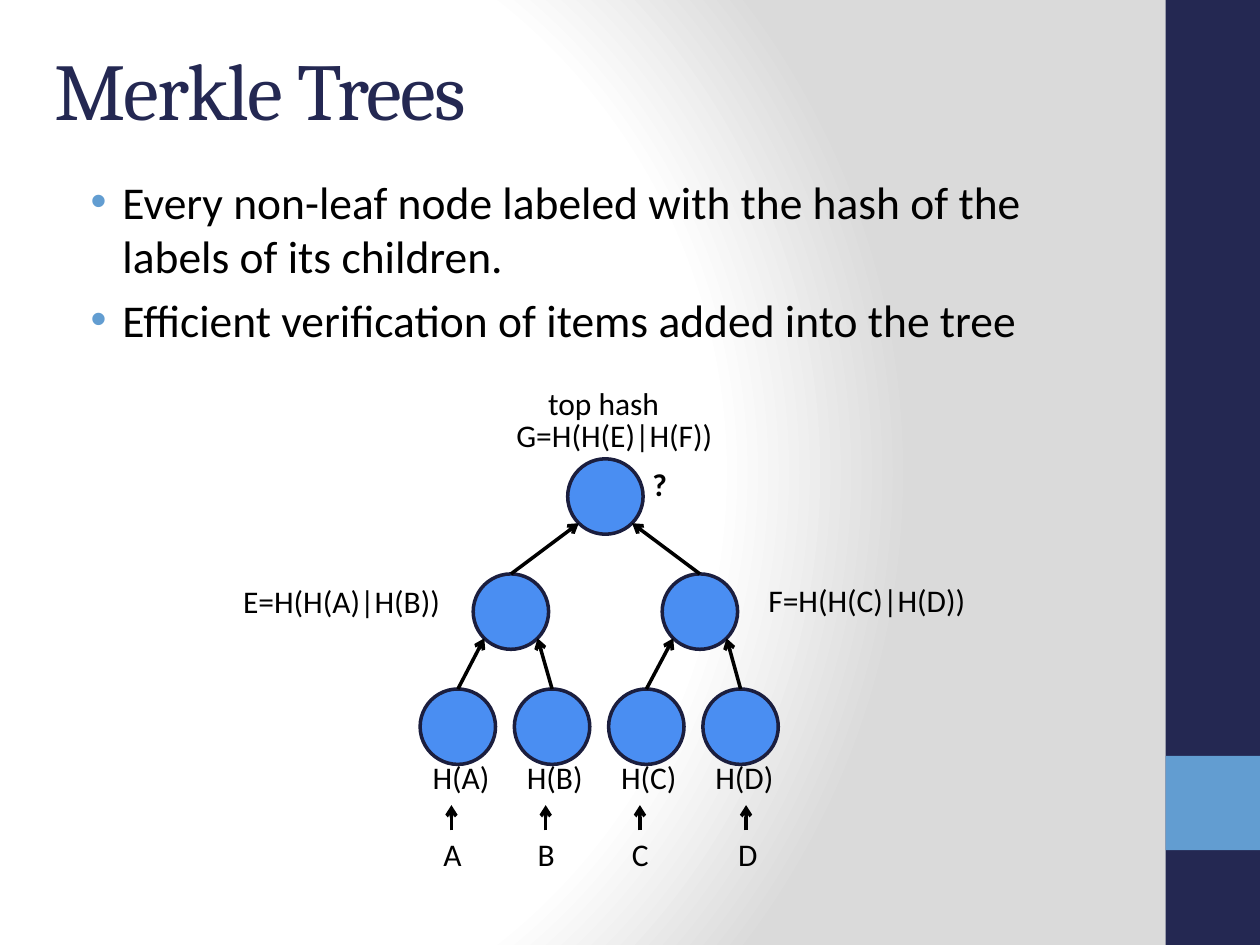
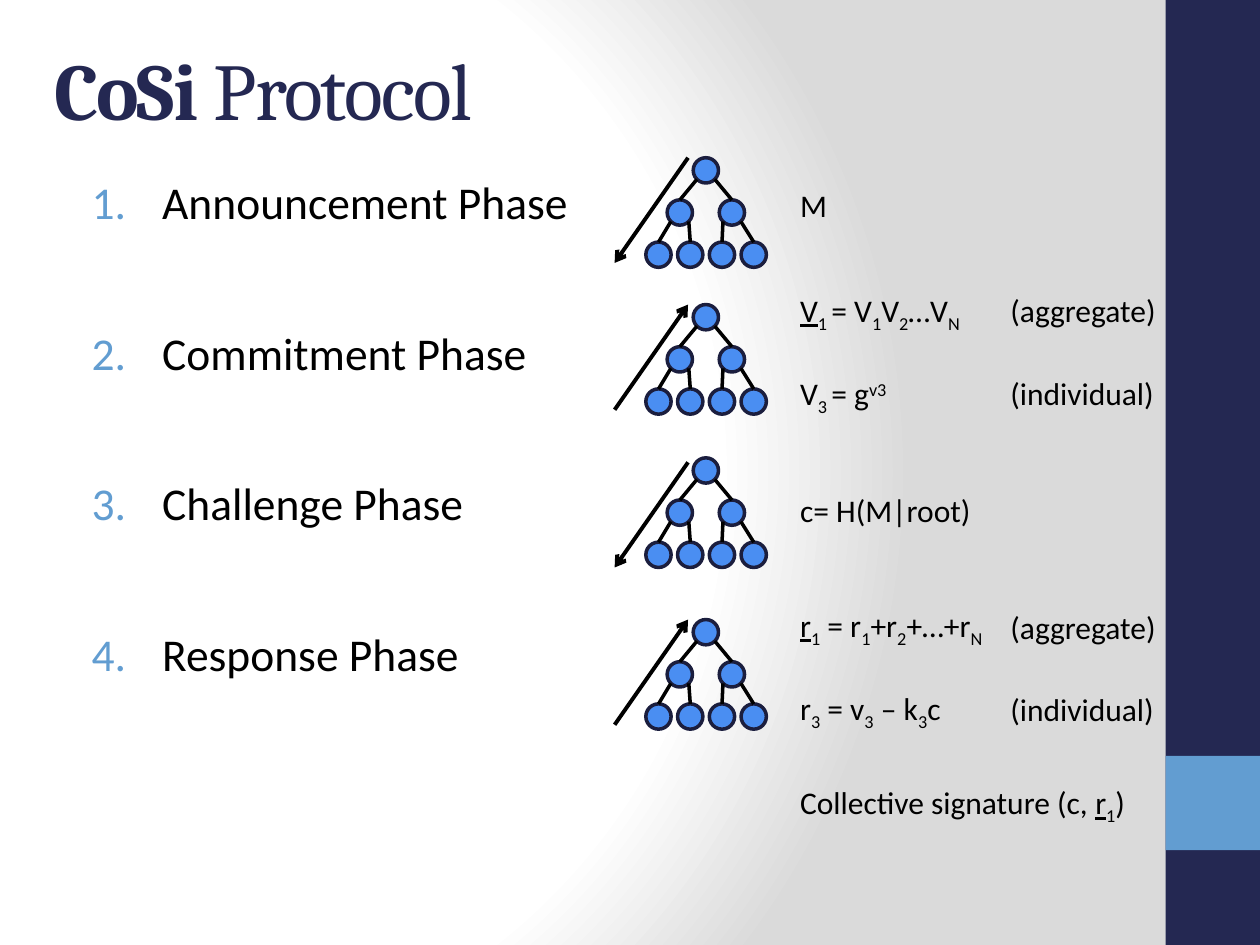
from collections import namedtuple
from math import sqrt

from lxml.etree import SubElement
from pptx import Presentation
from pptx.dml.color import RGBColor
from pptx.enum.shapes import MSO_CONNECTOR as Link, MSO_SHAPE as Shape
from pptx.enum.text import MSO_ANCHOR as Anchor
from pptx.oxml import parse_xml
from pptx.oxml.ns import nsdecls, qn
from pptx.util import Cm, Pt

COLORS = {
    "navy": "242852",
    "sky": "629DD1",
    "node": "4A8EF2",
    "rim": "1B1E3E",
    "ink": "000000",
    "white": "FFFFFF",
    "grey": "DADADA",
}
STYLES = {
    "plain": {},
    "bold": {"b": "1"},
    "under": {"u": "sng"},
    "sub": {"baseline": "-25000"},
    "sup": {"baseline": "30000"},
    "title": {"spc": "-100"},
    "bold title": {"spc": "-100", "b": "1"},
}
BACKGROUND = f"""<p:bg {nsdecls("p", "a")}><p:bgPr><a:gradFill rotWithShape="1"><a:gsLst>
<a:gs pos="0"><a:srgbClr val="{COLORS['white']}"/></a:gs>
<a:gs pos="75000"><a:srgbClr val="{COLORS['white']}"/></a:gs>
<a:gs pos="100000"><a:srgbClr val="{COLORS['grey']}"/></a:gs></a:gsLst>
<a:path path="circle"><a:fillToRect l="20000" t="50000" r="100000" b="50000"/></a:path>
</a:gradFill><a:effectLst/></p:bgPr></p:bg>"""

WIDTH, HEIGHT = 25.4, 19.05
BAND = 1.9

# All lengths in cm: node diameter, gap between levels and leaves, left offsets of the inner nodes
TreeSize = namedtuple("TreeSize", "node level leaf inner")
LARGE_TREE = TreeSize(1.52, 2.32, 1.9, (1.07, 4.88))
SMALL_TREE = TreeSize(0.51, 0.85, 0.64, (0.43, 1.48))


def rgb(name):
    return RGBColor.from_string(COLORS[name])


class Slides:
    def __init__(self):
        self.deck = Presentation()
        self.deck.slide_width, self.deck.slide_height = Cm(WIDTH), Cm(HEIGHT)
        self.page = None

    def new_page(self, *title):
        self.page = self.deck.slides.add_slide(self.deck.slide_layouts[6])
        self.page.element.cSld.insert(0, parse_xml(BACKGROUND))
        self.shape(Shape.RECTANGLE, WIDTH - BAND, 0, BAND, HEIGHT, "navy")
        self.shape(Shape.RECTANGLE, WIDTH - BAND, 15.24, BAND, BAND, "sky")
        frame = self.text_box(0.84, 0.2, 22.28, 3.18)
        frame.vertical_anchor = Anchor.MIDDLE
        self.add_spans(frame.paragraphs[0], title, 46, "Cambria", "navy")

    def shape(self, kind, left, top, width, height, fill, rim=None):
        shape = self.page.shapes.add_shape(kind, Cm(left), Cm(top), Cm(width), Cm(height))
        shape.shadow.inherit = False
        shape.fill.solid()
        shape.fill.fore_color.rgb = rgb(fill)
        if rim:
            shape.line.color.rgb = rgb(rim)
            shape.line.width = Pt(2)
        else:
            shape.line.fill.background()

    def text_box(self, left, top, width, height):
        box = self.page.shapes.add_textbox(Cm(left), Cm(top), Cm(width), Cm(height))
        box.text_frame.word_wrap = True
        return box.text_frame

    def add_spans(self, para, spans, size, font="Calibri", color="ink"):
        """Fill a paragraph with spans, each a string or a (text, style) pair."""
        for item in spans:
            text, style = (item, "plain") if isinstance(item, str) else item
            span = para.add_run()
            span.text = text
            span.font.size, span.font.name = Pt(size), font
            span.font.color.rgb = rgb(color)
            for key, value in STYLES[style].items():
                span.font._element.set(key, value)

    def label(self, left, top, width, *spans):
        frame = self.text_box(left, top, width, 1.02)
        self.add_spans(frame.paragraphs[0], spans, 18)

    def bullets(self, box, items, margin, hang, gap, numbered=False):
        frame = self.text_box(*box)
        for index, item in enumerate(items):
            para = frame.add_paragraph() if index else frame.paragraphs[0]
            props = para._p.get_or_add_pPr()
            props.set("marL", str(Cm(margin)))
            props.set("indent", str(-Cm(hang)))
            if index:
                para.space_before = Pt(gap)
            color = SubElement(props, qn("a:buClr"))
            SubElement(color, qn("a:srgbClr"), val=COLORS["sky"])
            if numbered:
                SubElement(props, qn("a:buAutoNum"), type="arabicPeriod")
            else:
                SubElement(props, qn("a:buFont"), typeface="Arial")
                SubElement(props, qn("a:buChar"), char="•")
            self.add_spans(para, [item], 26)

    def line(self, start, end, arrow=True, width=2):
        link = self.page.shapes.add_connector(
            Link.STRAIGHT, *(Cm(value) for value in (*start, *end)))
        link.line.color.rgb = rgb("ink")
        link.line.width = Pt(width)
        props = link.element.spPr
        if arrow:
            SubElement(props.find(qn("a:ln")), qn("a:tailEnd"), type="arrow")
        SubElement(props, qn("a:effectLst"))

    def tree(self, left, top, size, arrows):
        """Draw a three-level binary tree whose edges run from child to parent."""
        levels = [
            [sum(size.inner) / 2],
            list(size.inner),
            [size.leaf * index for index in range(4)],
        ]
        radius = size.node / 2
        reach = radius / sqrt(2)
        for depth, offsets in enumerate(levels):
            y = top + depth * size.level
            for index, offset in enumerate(offsets):
                x = left + offset
                self.shape(Shape.OVAL, x, y, size.node, size.node, "node", "rim")
                if depth:
                    parent = left + levels[depth - 1][index // 2] + radius
                    side = reach if index % 2 else -reach
                    self.line((x + radius, y),
                              (parent + side, y - size.level + radius + reach), arrows)


def merkle_trees(slides):
    slides.new_page(("Merkle Trees", "title"))
    slides.bullets((1.27, 3.38, 21.16, 3.81), [
        "Every non-leaf node labeled with the hash of the labels of its children.",
        "Efficient verification of items added into the tree",
    ], margin=0.95, hang=0.64, gap=5)

    left = 8.47
    slides.tree(left, 9.25, LARGE_TREE, arrows=True)
    for index, (letter, x) in enumerate(zip("ABCD", (9.1, 11, 12.9, 15.04))):
        slides.label(left + index * LARGE_TREE.leaf, 15.16, 1.75, f"H({letter})")
        slides.line((x, 16.74), (x, 16.23))
        slides.label(x - 0.41, 16.7, 0.9, letter)

    slides.label(4.65, 11.61, 5.08, "E=H(H(A)|H(B))")
    slides.label(15.24, 11.58, 6.15, "F=H(H(C)|H(D))")
    slides.label(10.8, 7.62, 2.8, "top hash")
    slides.label(10.16, 8.26, 6.15, "G=H(H(E)|H(F))")
    slides.label(12.9, 9.25, 0.85, ("?", "bold"))


def cosi_protocol(slides):
    slides.new_page(("CoSi", "bold title"), (" Protocol", "title"))
    slides.bullets((1.27, 3.38, 12.07, 14.6), [
        "Announcement Phase", "Commitment Phase", "Challenge Phase", "Response Phase",
    ], margin=1.75, hang=1.42, gap=55, numbered=True)

    phases = [(3.18, 3.18, True), (6.14, 6.14, False),
              (9.23, 9.32, True), (12.49, 12.49, False)]
    for tree_top, arrow_top, downward in phases:
        slides.tree(13.02, tree_top, SMALL_TREE, arrows=False)
        upper, lower = (13.87, arrow_top), (12.39, arrow_top + 2.12)
        start, end = (upper, lower) if downward else (lower, upper)
        slides.line(start, end, width=2.25)

    formulas = [
        (3.63, 1.2, ["M"]),
        (5.74, 4.1, [("V", "under"), ("1 ", "sub"), "= V", ("1", "sub"), "V", ("2", "sub"),
                     "…V", ("N", "sub")]),
        (7.42, 2.6, ["V", ("3 ", "sub"), "= g", ("v3", "sup")]),
        (9.78, 4.1, ["c= H(M|root)"]),
        (12.09, 4.5, [("r", "under"), ("1", "sub"), " = r", ("1", "sub"), "+r", ("2", "sub"),
                      "+…+r", ("N", "sub")]),
        (13.77, 3.6, ["r", ("3", "sub"), " = v", ("3", "sub"), " – k", ("3", "sub"), "c"]),
        (15.67, 7.3, ["Collective signature (c, ", ("r", "under"), ("1", "sub"), ")"]),
    ]
    for top, width, spans in formulas:
        slides.label(15.88, top, width, *spans)

    scopes = [(5.74, "aggregate"), (7.42, "individual"),
              (12.13, "aggregate"), (13.79, "individual")]
    for top, scope in scopes:
        slides.label(20.12, top, 3.6, f"({scope})")


def main():
    slides = Slides()
    merkle_trees(slides)
    cosi_protocol(slides)
    slides.deck.save("out.pptx")


if __name__ == "__main__":
    main()
